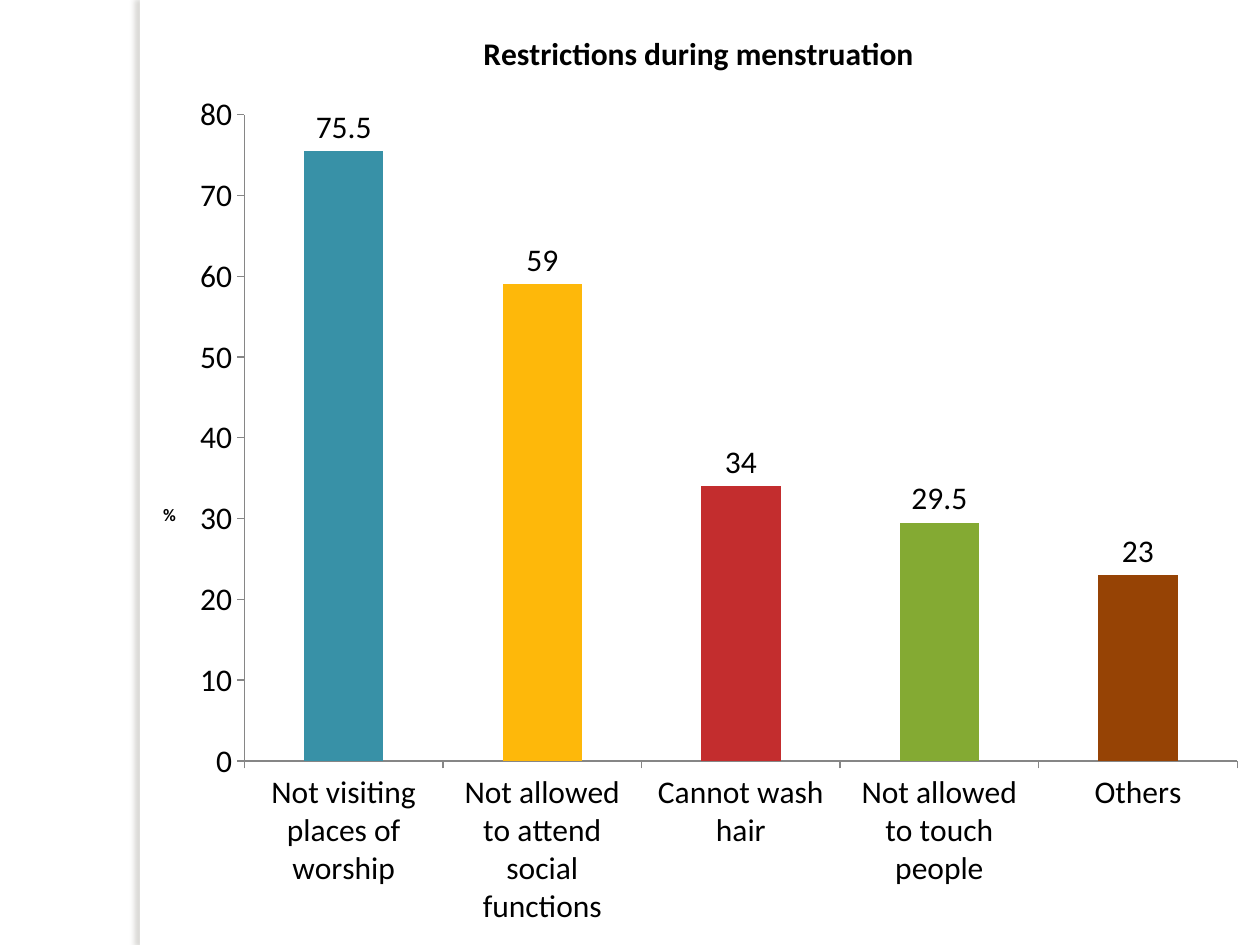
from dataclasses import dataclass

from lxml.etree import SubElement
from pptx import Presentation
from pptx.chart.data import CategoryChartData
from pptx.dml.color import RGBColor
from pptx.enum.chart import XL_CHART_TYPE, XL_LABEL_POSITION, XL_TICK_MARK
from pptx.enum.shapes import MSO_SHAPE
from pptx.oxml import parse_xml
from pptx.oxml.ns import nsdecls, qn
from pptx.util import Inches, Pt


@dataclass(frozen=True)
class Theme:
    """Colours, font and type sizes of the slide."""
    font: str = "Calibri"
    text: str = "000000"
    paper: str = "FFFFFF"
    shadow: str = "736F63"
    axis: str = "868686"
    bars: tuple = ("3891A7", "FEB80A", "C32D2E", "84AA33", "964305")
    large: int = 18
    small: int = 10


THEME = Theme()
LEFT, WIDTH, HEIGHT = 1.09, 8.91, 7.5
RESTRICTIONS = {
    "Not visiting places of worship": 75.5,
    "Not allowed to attend social functions": 59,
    "Cannot wash hair": 34,
    "Not allowed to touch people": 29.5,
    "Others": 23,
}


def rgb(value):
    """Return a colour from its hex string."""
    return RGBColor.from_string(value)


def style_font(font, size, bold=False):
    """Apply the theme's font at the given size."""
    font.name, font.size, font.bold = THEME.font, Pt(size), bold
    font.color.rgb = rgb(THEME.text)


def add_edge(slide):
    """Add the white strip that casts a shadow to the left."""
    sp = slide.shapes.add_shape(
        MSO_SHAPE.RECTANGLE, Inches(1.11), 0, Inches(0.08), Inches(HEIGHT))
    sp.fill.solid()
    sp.fill.fore_color.rgb = rgb(THEME.paper)
    sp.line.fill.background()
    sp.shadow.inherit = False
    effects = sp._element.spPr.find(qn("a:effectLst"))
    effects.append(parse_xml(
        f'<a:outerShdw {nsdecls("a")} blurRad="{Pt(3)}" dist="{Pt(3)}" '
        f'dir="10800000" algn="tl" rotWithShape="0"><a:srgbClr val="{THEME.shadow}">'
        '<a:alpha val="25000"/></a:srgbClr></a:outerShdw>'))


def set_layout(element, index, **values):
    """Give a chart part a manual layout."""
    for old in element.findall(qn("c:layout")):
        element.remove(old)
    layout = element.makeelement(qn("c:layout"))
    element.insert(index, layout)
    manual = SubElement(layout, qn("c:manualLayout"))
    for name, value in values.items():
        SubElement(manual, qn(f"c:{name}")).set("val", str(value))


def set_title(title, text, size):
    """Write a bold chart or axis title."""
    title.text_frame.text = text
    style_font(title.text_frame.paragraphs[0].runs[0].font, size, True)


def style_axis(axis):
    """Set an axis's ticks, line and labels."""
    axis.has_major_gridlines = False
    axis.major_tick_mark = XL_TICK_MARK.OUTSIDE
    axis.minor_tick_mark = XL_TICK_MARK.NONE
    axis.format.line.color.rgb = rgb(THEME.axis)
    axis.format.line.width = Pt(0.75)
    style_font(axis.tick_labels.font, THEME.large)


def style_value_axis(axis):
    """Set the scale and the upright percent title."""
    axis.minimum_scale, axis.maximum_scale, axis.major_unit = 0, 80, 10
    set_title(axis.axis_title, "%", THEME.small)
    title = axis.axis_title._element
    body = title.find(f".//{qn('a:bodyPr')}")
    body.set("rot", "0")
    body.set("vert", "horz")
    set_layout(title, 1, xMode="edge", yMode="edge", x=0.02, y=0.53)


def style_bars(plot):
    """Colour each bar and show its value above it."""
    plot.gap_width = 150
    plot.vary_by_categories = False
    plot.has_data_labels = True
    labels = plot.data_labels
    labels.show_value = True
    labels.position = XL_LABEL_POSITION.OUTSIDE_END
    style_font(labels.font, THEME.large)
    for i, color in enumerate(THEME.bars):
        fill = plot.series[0].points[i].format.fill
        fill.solid()
        fill.fore_color.rgb = rgb(color)


def add_column_chart(slide):
    """Add the column chart of restrictions."""
    data = CategoryChartData()
    data.categories = list(RESTRICTIONS)
    data.add_series("Series 1", list(RESTRICTIONS.values()))
    chart = slide.shapes.add_chart(
        XL_CHART_TYPE.COLUMN_CLUSTERED, Inches(LEFT), 0,
        Inches(WIDTH), Inches(HEIGHT), data).chart
    style_font(chart.font, THEME.small)
    chart.has_legend = False
    set_title(chart.chart_title, "Restrictions during menstruation", THEME.large)
    chart.chart_title.include_in_layout = False
    style_axis(chart.category_axis)
    style_axis(chart.value_axis)
    style_value_axis(chart.value_axis)
    style_bars(chart.plots[0])
    area = chart._chartSpace.find(f".//{qn('c:plotArea')}")
    set_layout(area, 0, layoutTarget="inner", xMode="edge", yMode="edge",
               x=round((1.94 - LEFT) / WIDTH, 4), y=round(0.91 / HEIGHT, 4),
               w=round(7.88 / WIDTH, 4), h=round(5.13 / HEIGHT, 4))


def main():
    """Build and save the slide."""
    prs = Presentation()
    prs.slide_width, prs.slide_height = Inches(10), Inches(HEIGHT)
    slide = prs.slides.add_slide(prs.slide_layouts[6])
    add_edge(slide)
    add_column_chart(slide)
    prs.save("out.pptx")


if __name__ == "__main__":
    main()
